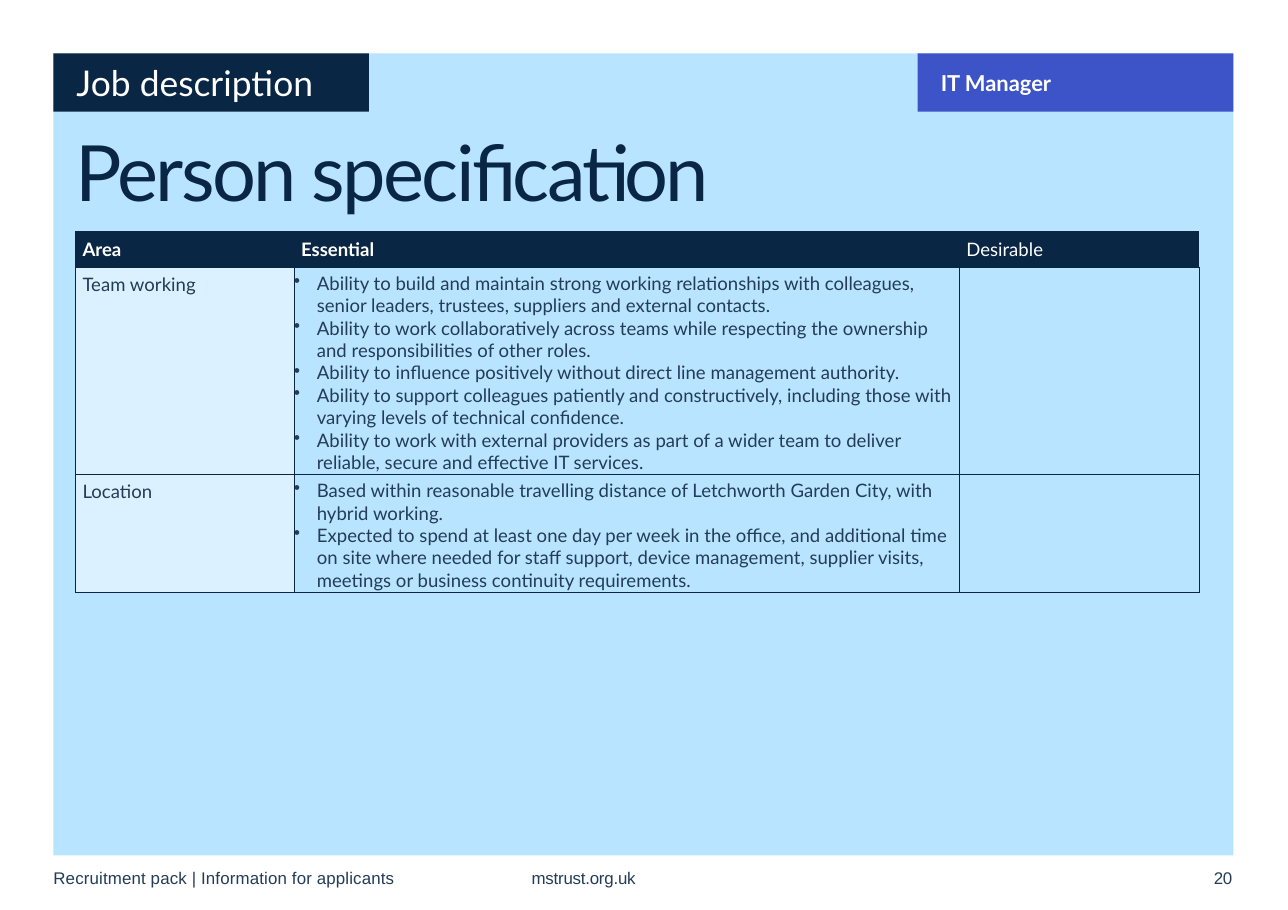
from dataclasses import dataclass
from typing import Any

from lxml import etree
from pptx import Presentation, util as u
from pptx.dml.color import RGBColor
from pptx.enum import shapes, text
from pptx.oxml import ns

PX = 9144
NAVY, SLATE, SKY, PALE, INDIGO, WHITE = "0A2645", "233C57", "B8E4FF", "DBF1FF", "3D54C9", "FFFFFF"
NO_GRID = "{2D5ABB26-0587-4C30-8999-92F81FD0307C}"


@dataclass
class Style:
    size: int
    color: str
    font: str = "Lato"
    bold: bool = False
    spacing: float = 0


@dataclass
class Panel:
    left: int
    top: int
    width: int
    height: int
    fill: str
    label: str = ""
    style: Style | None = None


@dataclass
class Note:
    left: int
    width: int
    wording: str
    spacing: float


@dataclass
class Criterion:
    area: str
    essential: list[str]
    height: int


PANELS = [
    Panel(44, 44, 972, 661, SKY),
    Panel(44, 44, 260, 48, NAVY, "Job description", Style(21, WHITE)),
    Panel(756, 44, 260, 48, INDIGO, "IT Manager", Style(13, WHITE, bold=True)),
]
FOOTER = [
    Note(44, 305, "Recruitment pack | Information for applicants", 0.1),
    Note(438, 110, "mstrust.org.uk", -0.1),
    Note(1000, 21, "20", -0.2),
]
COLUMNS = [180, 548, 198]
HEADINGS = ["Area", "Essential", "Desirable"]
CRITERIA = [
    Criterion("Team working", [
        "Ability to build and maintain strong working relationships with colleagues, senior leaders, trustees, suppliers and external contacts.",
        "Ability to work collaboratively across teams while respecting the ownership and responsibilities of other roles.",
        "Ability to influence positively without direct line management authority.",
        "Ability to support colleagues patiently and constructively, including those with varying levels of technical confidence.",
        "Ability to work with external providers as part of a wider team to deliver reliable, secure and effective IT services.",
    ], 171),
    Criterion("Location", [
        "Based within reasonable travelling distance of Letchworth Garden City, with hybrid working.",
        "Expected to spend at least one day per week in the office, and additional time on site where needed for staff support, device management, supplier visits, meetings or business continuity requirements.",
    ], 97),
]


def px(length: int) -> int:
    return length * PX


def rgb(color: str) -> RGBColor:
    return RGBColor.from_string(color)


def paint(target: Any, color: str) -> None:
    target.fill.solid()
    target.fill.fore_color.rgb = rgb(color)


def apply(target: Any, values: dict[str, Any]) -> None:
    for name, value in values.items():
        setattr(target, name, value)


def margins(left: int = 0, top: int = 0) -> dict[str, int]:
    return {"margin_left": px(left), "margin_top": px(top), "margin_right": 0, "margin_bottom": 0}


def write(paragraph: Any, wording: str, style: Style, line_spacing: float = 1.0) -> None:
    run = paragraph.add_run()
    run.text = wording
    apply(paragraph, {"alignment": text.PP_ALIGN.LEFT, "line_spacing": line_spacing})
    apply(run.font, {"name": style.font, "size": u.Pt(style.size), "bold": style.bold})
    run.font.color.rgb = rgb(style.color)
    if style.spacing:
        run.font._element.set("spc", str(round(style.spacing * 100)))


def add_panel(slide: Any, panel: Panel) -> None:
    box = slide.shapes.add_shape(
        shapes.MSO_SHAPE.RECTANGLE, *map(px, (panel.left, panel.top, panel.width, panel.height)))
    box.shadow.inherit = False
    box.line.fill.background()
    paint(box, panel.fill)
    if panel.style:
        frame = box.text_frame
        apply(frame, {**margins(19), "vertical_anchor": text.MSO_ANCHOR.MIDDLE, "word_wrap": True})
        write(frame.paragraphs[0], panel.label, panel.style)


def add_title(slide: Any) -> None:
    title = slide.shapes.title
    apply(title, {"left": px(62), "top": px(111), "width": px(926), "height": px(70)})
    frame = title.text_frame
    apply(frame, {**margins(), "vertical_anchor": text.MSO_ANCHOR.TOP, "word_wrap": True,
                  "auto_size": text.MSO_AUTO_SIZE.NONE})
    write(frame.paragraphs[0], "Person specification", Style(46, NAVY, spacing=-1.5), 0.9)
    slide.shapes._spTree.append(title._element)


def add_note(slide: Any, note: Note) -> None:
    frame = slide.shapes.add_textbox(px(note.left), px(715), px(note.width), px(21)).text_frame
    apply(frame, {**margins(), "word_wrap": True})
    write(frame.paragraphs[0], note.wording, Style(10, SLATE, "Arial", spacing=note.spacing))


def add_borders(cell: Any) -> None:
    properties = cell._tc.get_or_add_tcPr()
    for side in "LRTB":
        edge = etree.SubElement(properties, ns.qn(f"a:ln{side}"), w=str(u.Pt(0.25)))
        solid = etree.SubElement(edge, ns.qn("a:solidFill"))
        etree.SubElement(solid, ns.qn("a:srgbClr"), val=NAVY)


def add_bullet(paragraph: Any) -> None:
    properties = paragraph._p.get_or_add_pPr()
    properties.set("marL", str(px(19)))
    properties.set("indent", str(px(-19)))
    etree.SubElement(properties, ns.qn("a:buChar"), char="•")


def add_criteria(slide: Any) -> None:
    heights = [30] + [criterion.height for criterion in CRITERIA]
    table = slide.shapes.add_table(
        len(heights), len(COLUMNS), px(62), px(190), px(sum(COLUMNS)), px(sum(heights))).table
    apply(table, {"first_row": False, "horz_banding": False})
    table._tbl.tblPr.find(ns.qn("a:tableStyleId")).text = NO_GRID
    for column, width in zip(table.columns, COLUMNS):
        column.width = px(width)
    for row, height in zip(table.rows, heights):
        row.height = px(height)

    for column, heading in enumerate(HEADINGS):
        cell = table.cell(0, column)
        apply(cell, margins(6, 6))
        write(cell.text_frame.paragraphs[0], heading, Style(11, WHITE, bold=heading != "Desirable"))
        paint(cell, NAVY)

    body = Style(11, SLATE)
    for row, criterion in enumerate(CRITERIA, 1):
        area, essential, desirable = (table.cell(row, column) for column in range(len(COLUMNS)))
        for cell, color, left in ((area, PALE, 6), (essential, SKY, 0), (desirable, SKY, 0)):
            apply(cell, margins(left, 4))
            add_borders(cell)
            paint(cell, color)
        write(area.text_frame.paragraphs[0], criterion.area, body, 1.06)
        for index, requirement in enumerate(criterion.essential):
            frame = essential.text_frame
            paragraph = frame.add_paragraph() if index else frame.paragraphs[0]
            add_bullet(paragraph)
            write(paragraph, requirement, body)


def main() -> None:
    deck = Presentation()
    apply(deck, {"slide_width": px(1061), "slide_height": px(750)})
    slide = deck.slides.add_slide(deck.slide_layouts[5])
    for panel in PANELS:
        add_panel(slide, panel)
    add_title(slide)
    add_criteria(slide)
    for note in FOOTER:
        add_note(slide, note)
    deck.save("out.pptx")


if __name__ == "__main__":
    main()
